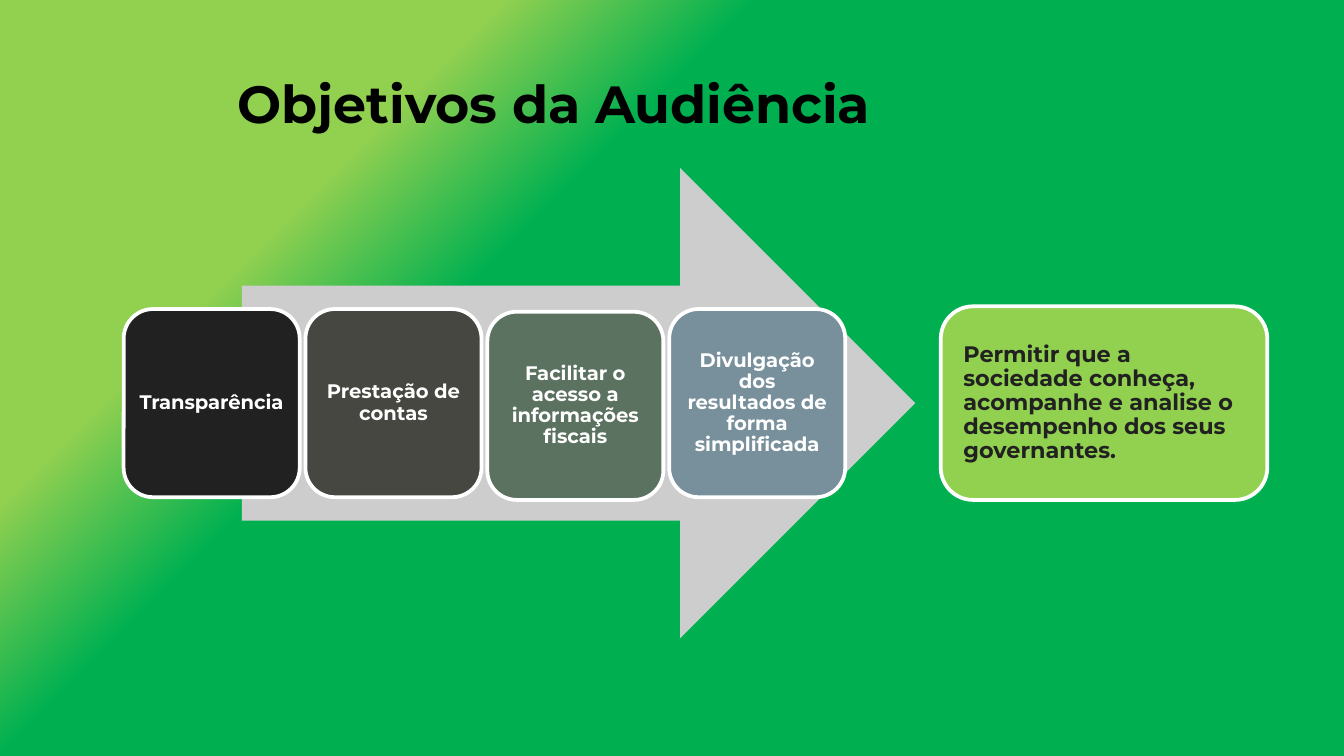
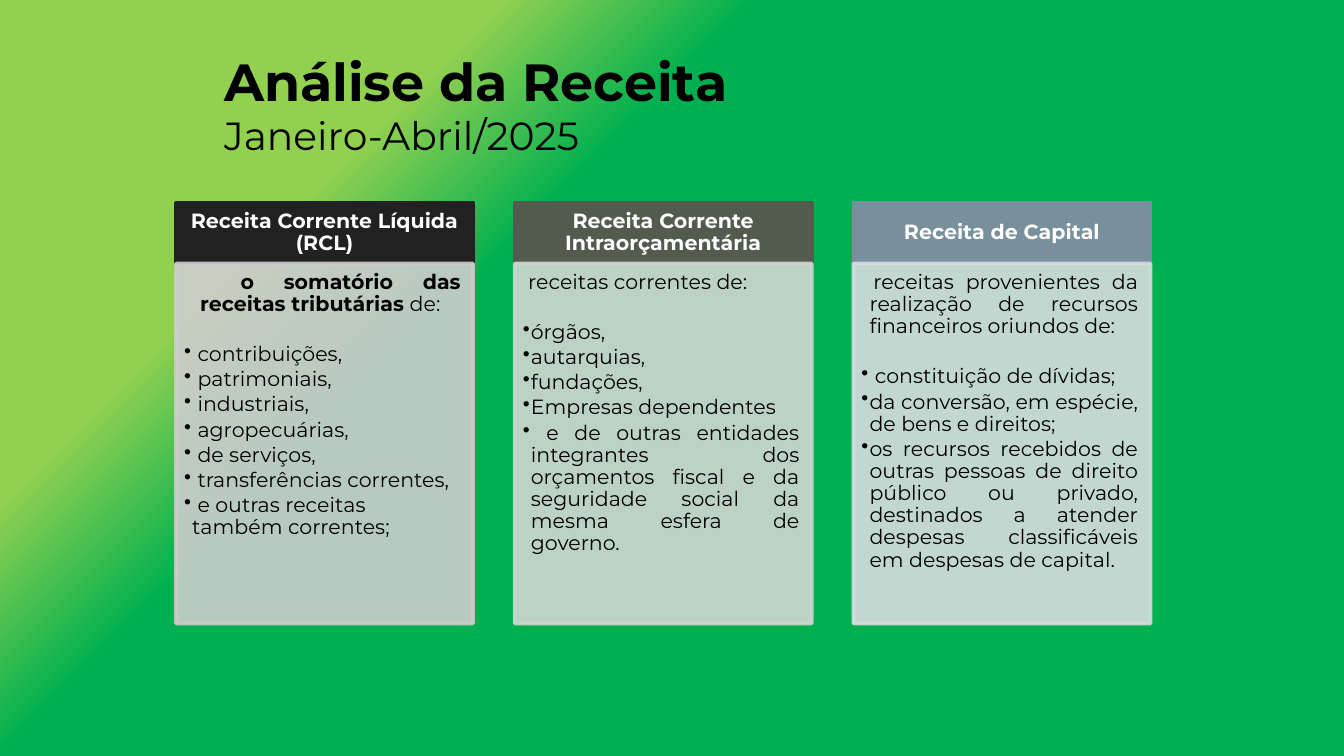
from copy import deepcopy

from lxml import etree
from pptx import Presentation
from pptx.dml.color import RGBColor
from pptx.enum.shapes import MSO_SHAPE
from pptx.enum.text import MSO_ANCHOR, PP_ALIGN
from pptx.oxml.ns import qn
from pptx.util import Inches, Pt

# Shared look
FONT = "Montserrat"
LIME = RGBColor(0x92, 0xD0, 0x50)
GREEN = RGBColor(0x00, 0xB0, 0x50)
BLACK = RGBColor(0x00, 0x00, 0x00)
WHITE = RGBColor(0xFF, 0xFF, 0xFF)
DARK = RGBColor(0x21, 0x21, 0x21)
BROWN = RGBColor(0x47, 0x47, 0x41)
OLIVE = RGBColor(0x53, 0x5B, 0x4E)
MOSS = RGBColor(0x5C, 0x72, 0x60)
SLATE = RGBColor(0x78, 0x90, 0x9C)
GRAY = RGBColor(0xCD, 0xCD, 0xCD)
MIST = RGBColor(0xD1, 0xD6, 0xD1)
ICE = RGBColor(0xD7, 0xDC, 0xDF)
BACK = ((0, LIME), (0.24, LIME), (0.36, GREEN), (1, GREEN))

RECT = MSO_SHAPE.RECTANGLE
ROUND = MSO_SHAPE.ROUNDED_RECTANGLE
ARROW = MSO_SHAPE.RIGHT_ARROW
LEFT, MID, FULL = PP_ALIGN.LEFT, PP_ALIGN.CENTER, PP_ALIGN.JUSTIFY
TOP, CENTER, BASE = MSO_ANCHOR.TOP, MSO_ANCHOR.MIDDLE, MSO_ANCHOR.BOTTOM

# Slide 1: label, fill, top
STEPS = (
    ("Transparência", DARK, 2.3),
    ("Prestação de contas", BROWN, 2.3),
    ("Facilitar o acesso a informações fiscais", MOSS, 2.32),
    ("Divulgação dos resultados de forma simplificada", SLATE, 2.3),
)
GOAL = ("Permitir que a sociedade conheça, acompanhe e analise o "
        "desempenho dos seus governantes.")

# Slide 2: head, head fill, body fill, lead runs, lead indents,
# item alignment, items
COLUMNS = (
    ("Receita Corrente Líquida (RCL)", DARK, GRAY,
     (("o somatório das receitas tributárias", True), (" de:", False)),
     (0.12, 0.3), LEFT,
     (" contribuições,", " patrimoniais,", " industriais,",
      " agropecuárias,", " de serviços,", " transferências correntes,",
      " e outras receitas também correntes;")),
    ("Receita Corrente Intraorçamentária", OLIVE, MIST,
     ((" receitas correntes de:", False),), (0.06, -0.06), FULL,
     ("órgãos,", "autarquias,", "fundações,", "Empresas dependentes",
      " e de outras entidades integrantes dos orçamentos fiscal e da "
      "seguridade social da mesma esfera de governo.")),
    ("Receita de Capital", SLATE, ICE,
     ((" receitas provenientes da realização de recursos financeiros "
       "oriundos de:", False),), (0.06, -0.06), FULL,
     (" constituição de dívidas;",
      "da conversão, em espécie, de bens e direitos;",
      "os recursos recebidos de outras pessoas de direito público ou "
      "privado, destinados a atender despesas classificáveis em despesas "
      "de capital.")),
)


def style(para, size, color, bold=None, align=LEFT):
    para.alignment = align
    font = para.font
    font.name, font.size, font.bold = FONT, Pt(size), bold
    font.color.rgb = color


def set_frame(shape, anchor, pads):
    frame = shape.text_frame
    frame.word_wrap = True
    frame.vertical_anchor = anchor
    (frame.margin_left, frame.margin_top,
     frame.margin_right, frame.margin_bottom) = map(Inches, pads)
    return frame


def add_page(deck):
    """Blank slide with the diagonal gradient."""
    slide = deck.slides.add_slide(deck.slide_layouts[6])
    fill = slide.background.fill
    fill.gradient()
    fill.gradient_angle = 315
    stops = slide.element.find(".//" + qn("a:gsLst"))
    for _ in range(len(BACK) - len(stops)):
        stops.append(deepcopy(stops[0]))
    for stop, (place, color) in zip(fill.gradient_stops, BACK):
        stop.position = place
        stop.color.rgb = color
    return slide


def add_title(slide, box, *lines):
    """Title lines given as text, size and bold."""
    shape = slide.shapes.add_textbox(*map(Inches, box))
    frame = set_frame(shape, BASE, (0.1, 0.05, 0.1, 0.05))
    for i, (text, size, bold) in enumerate(lines):
        para = frame.add_paragraph() if i else frame.paragraphs[0]
        para.text = text
        style(para, size, BLACK, bold)


def add_block(slide, kind, box, fill, line=None):
    shape = slide.shapes.add_shape(kind, *map(Inches, box))
    shape.shadow.inherit = False
    shape.fill.solid()
    shape.fill.fore_color.rgb = fill
    if line is None:
        shape.line.fill.background()
    else:
        shape.line.color.rgb = line
        shape.line.width = Pt(2)
    return shape


def add_label(shape, text, size, color, align=MID, side=0.05):
    frame = set_frame(shape, CENTER, (side, 0.05, side, 0.05))
    para = frame.paragraphs[0]
    para.text = text
    para.line_spacing = 0.9
    style(para, size, color, True, align)


def fade(shape, percent):
    """Make the fill and line of a shape partly see-through."""
    for color in shape.element.spPr.iter(qn("a:srgbClr")):
        etree.SubElement(color, qn("a:alpha"), val=str(percent * 1000))


def indent(para, left, first, bullet=False):
    props = para._p.get_or_add_pPr()
    props.set("marL", str(Inches(left)))
    props.set("indent", str(Inches(first)))
    if bullet:
        etree.SubElement(props, qn("a:buChar"), char="•")


def add_column(slide, left, column):
    head, dark, pale, lead, shift, align, items = column
    top = add_block(slide, RECT, (left, 1.51, 2.21, 0.45), dark, dark)
    add_label(top, head, 11, WHITE, side=0.09)

    body = add_block(slide, RECT, (left, 1.96, 2.21, 2.68), pale, pale)
    fade(body, 90)
    frame = set_frame(body, TOP, (0.06, 0.06, 0.09, 0.1))
    para = frame.paragraphs[0]
    for text, bold in lead:
        run = para.add_run()
        run.text = text
        run.font.bold = bold
    indent(para, *shift)
    style(para, 11, BLACK, align=FULL)
    for item in items:
        para = frame.add_paragraph()
        para.text = item
        indent(para, 0.06, -0.06, True)
        style(para, 11, BLACK, align=align)
    for para in frame.paragraphs:
        para.line_spacing = 0.9
        para.space_after = Pt(1.6)
    frame.paragraphs[1].space_before = Pt(13.5)


def add_goals(deck):
    slide = add_page(deck)
    add_block(slide, ARROW, (1.8, 1.25, 5.01, 3.5), GRAY)
    for i, (text, fill, top) in enumerate(STEPS):
        box = (0.92 + 1.353 * i, top, 1.31, 1.4)
        add_label(add_block(slide, ROUND, box, fill, WHITE),
                  text, 10.5, WHITE)
    add_title(slide, (1.67, 0.19, 8.08, 0.86),
              ("Objetivos da Audiência", 28, True))
    goal = add_block(slide, ROUND, (7, 2.28, 2.43, 1.44), LIME, WHITE)
    add_label(goal, GOAL, 12, DARK, LEFT, 0.1)


def add_income(deck):
    slide = add_page(deck)
    add_title(slide, (1.57, 0.37, 8.1, 0.86),
              ("Análise da Receita", 28, True),
              ("Janeiro-Abril/2025", 21, False))
    for i, column in enumerate(COLUMNS):
        add_column(slide, 1.31 + 2.52 * i, column)


def main():
    deck = Presentation()
    deck.slide_width = Inches(10)
    deck.slide_height = Inches(5.625)
    add_goals(deck)
    add_income(deck)
    deck.save("out.pptx")


if __name__ == "__main__":
    main()
